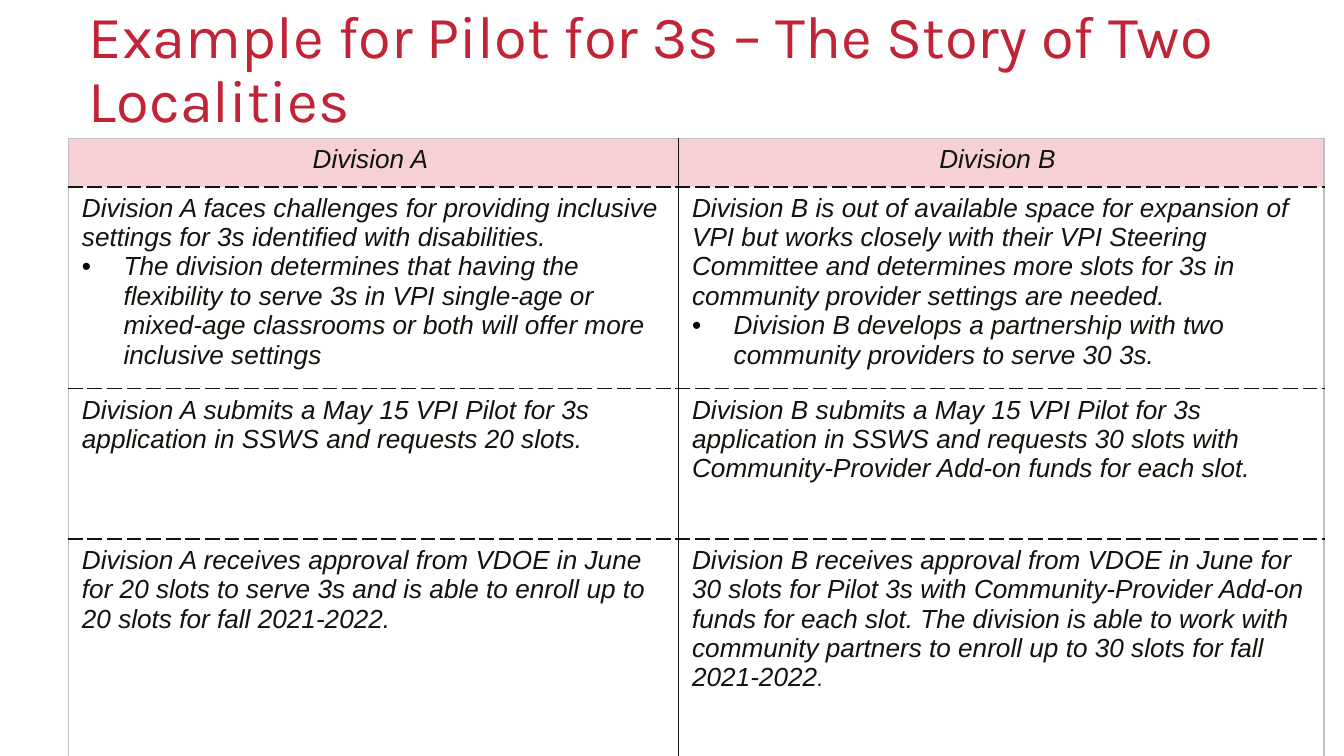
from lxml.etree import SubElement
from pptx import Presentation
from pptx.dml.color import RGBColor
from pptx.enum.text import MSO_ANCHOR, PP_ALIGN
from pptx.oxml.ns import qn
from pptx.util import Inches, Pt

# Content: each cell is a list of paragraphs; "• " marks a bullet
TITLE = "Example for Pilot for 3s – The Story of Two Localities"
ROWS = [
    (["Division A "], ["Division B "]),
    (["Division A faces challenges for providing inclusive settings for 3s "
      "identified with disabilities.",
      "• The division determines that having the flexibility to serve 3s in VPI "
      "single-age or mixed-age classrooms or both will offer more inclusive settings"],
     ["Division B is out of available space for expansion of VPI but works closely "
      "with their VPI Steering Committee and determines more slots for 3s in "
      "community provider settings are needed.",
      "• Division B develops a partnership with two community providers to serve 30 3s."]),
    (["Division A submits a May 15 VPI Pilot for 3s application in SSWS and "
      "requests 20 slots."],
     ["Division B submits a May 15 VPI Pilot for 3s application in SSWS and "
      "requests 30 slots with Community-Provider Add-on funds for each slot."]),
    (["Division A receives approval from VDOE in June for 20 slots to serve 3s and "
      "is able to enroll up to 20 slots for fall 2021-2022."],
     ["Division B receives approval from VDOE in June for",
      "30 slots for Pilot 3s with Community-Provider Add-on funds for each slot. "
      "The division is able to work with community partners to enroll up to 30 "
      "slots for fall 2021-2022"]),
]
CLOSING_STOP = "."  # smaller full stop that ends the last cell

# Layout in inches, on a 16:9 slide
SLIDE_W = 10
SLIDE_H = SLIDE_W * 9 / 16
TABLE_LEFT, TABLE_TOP = 0.51, 1.03
COL_WIDTHS = [4.54, 4.8]
ROW_HEIGHTS = [0.36, 1.49, 1.12, 1.63]
BULLET_INDENT = 0.31

RED, INK, PINK, GREY = "C12436", "0F150D", "F6D0D4", "BFBFBF"


def rgb(value):
    return RGBColor.from_string(value)


def style(font, name, size, color, italic=False):
    font.name, font.size, font.italic = name, Pt(size), italic
    font.color.rgb = rgb(color)


def add_bullet(paragraph):
    props = paragraph._p.get_or_add_pPr()
    props.set("marL", str(Inches(BULLET_INDENT)))
    props.set("indent", str(-Inches(BULLET_INDENT)))
    color = SubElement(props, qn("a:buClr"))
    SubElement(color, qn("a:srgbClr"), val="000000")
    SubElement(props, qn("a:buFont"), typeface="Arial")
    SubElement(props, qn("a:buChar"), char="•")


def add_border(cell, side, color, dash):
    line = SubElement(cell._tc.get_or_add_tcPr(), qn(f"a:ln{side}"), w=str(Pt(1)))
    fill = SubElement(line, qn("a:solidFill"))
    SubElement(fill, qn("a:srgbClr"), val=color)
    SubElement(line, qn("a:prstDash"), val=dash)


def set_borders(cell, row, col):
    """Grey frame, solid line between columns, dashed lines between rows."""
    outer = {"L": col == 0, "R": col == len(COL_WIDTHS) - 1,
             "T": row == 0, "B": row == len(ROWS) - 1}
    for side, is_outer in outer.items():
        dash = "sysDash" if side in "TB" and not is_outer else "solid"
        add_border(cell, side, GREY if is_outer else INK, dash)


def fill_cell(cell, paragraphs, is_header):
    frame = cell.text_frame
    frame.text = "\n".join(text.removeprefix("• ") for text in paragraphs)
    for paragraph, text in zip(frame.paragraphs, paragraphs):
        if text.startswith("•"):
            add_bullet(paragraph)
        if is_header:
            paragraph.alignment = PP_ALIGN.CENTER
        for run in paragraph.runs:
            style(run.font, "Arial", 14, INK, italic=True)


prs = Presentation()
prs.slide_width, prs.slide_height = Inches(SLIDE_W), Inches(SLIDE_H)
slide = prs.slides.add_slide(prs.slide_layouts[6])

# Title
heading = slide.shapes.add_textbox(Inches(0.59), Inches(0.13), Inches(9.41), Inches(0.8))
frame = heading.text_frame
frame.word_wrap = True
frame.vertical_anchor = MSO_ANCHOR.MIDDLE
frame.margin_left = frame.margin_right = Inches(0.07)
frame.margin_top = frame.margin_bottom = Inches(0.04)
frame.text = TITLE
frame.paragraphs[0].line_spacing = 0.9
style(frame.paragraphs[0].runs[0].font, "Karla", 32, RED)

# Comparison table
table = slide.shapes.add_table(
    len(ROWS), len(COL_WIDTHS), Inches(TABLE_LEFT), Inches(TABLE_TOP),
    Inches(sum(COL_WIDTHS)), Inches(sum(ROW_HEIGHTS))).table
table.horz_banding = False
for column, width in zip(table.columns, COL_WIDTHS):
    column.width = Inches(width)
for table_row, height in zip(table.rows, ROW_HEIGHTS):
    table_row.height = Inches(height)

for r, divisions in enumerate(ROWS):
    for c, paragraphs in enumerate(divisions):
        cell = table.cell(r, c)
        fill_cell(cell, paragraphs, is_header=r == 0)
        set_borders(cell, r, c)
        if r == 0:
            cell.fill.solid()
            cell.fill.fore_color.rgb = rgb(PINK)
        else:
            cell.fill.background()

# Closing full stop of the last cell
stop = table.cell(len(ROWS) - 1, 1).text_frame.paragraphs[-1].add_run()
stop.text = CLOSING_STOP
style(stop.font, "Arial", 12, INK, italic=True)

prs.save("out.pptx")
